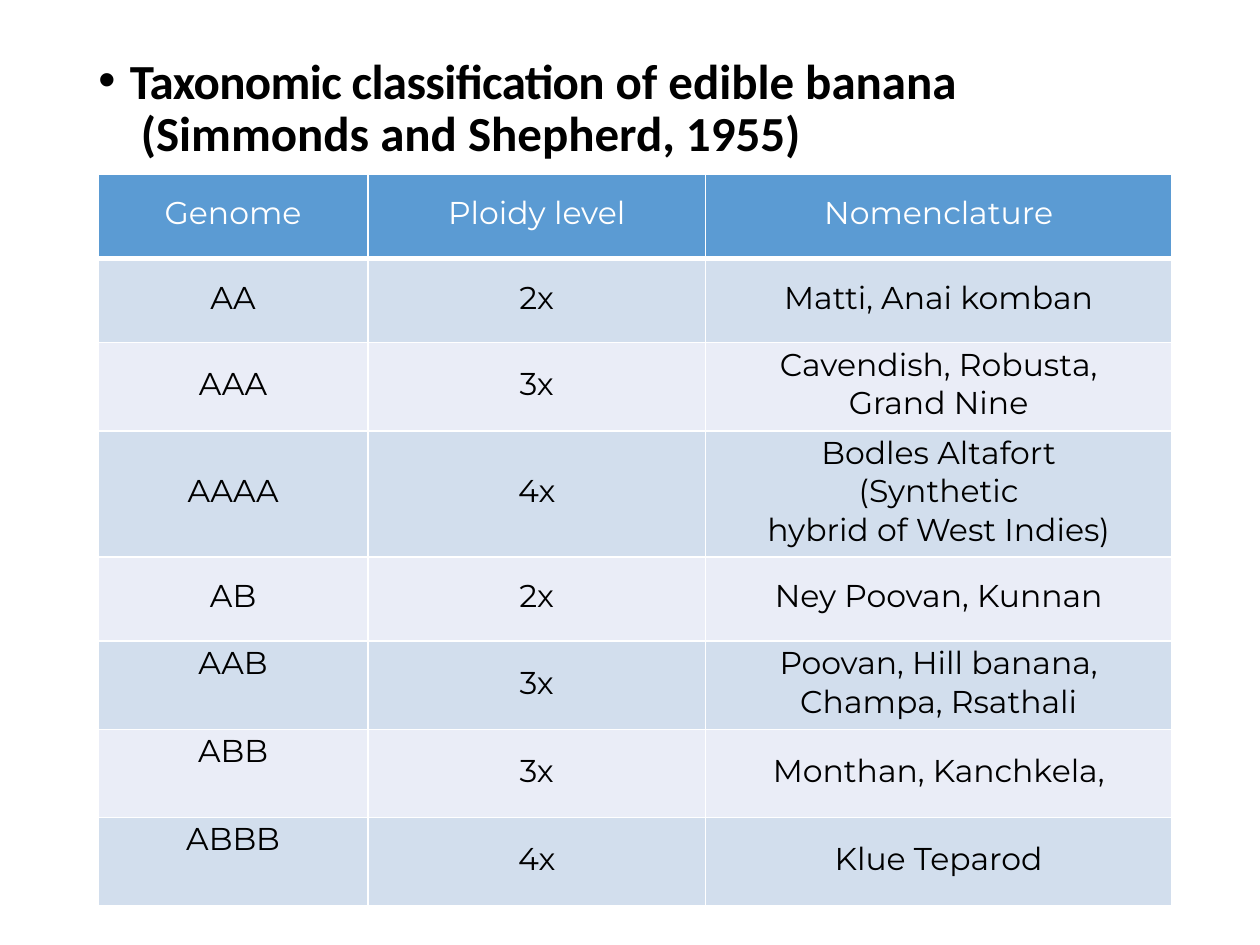
from dataclasses import dataclass

from lxml.etree import SubElement
from pptx import Presentation
from pptx.dml.color import RGBColor
from pptx.enum.text import MSO_ANCHOR, MSO_AUTO_SIZE, PP_ALIGN
from pptx.oxml.ns import qn
from pptx.util import Inches, Pt


@dataclass(frozen=True)
class Theme:
    text: RGBColor = RGBColor(0, 0, 0)
    white: RGBColor = RGBColor(255, 255, 255)
    header: RGBColor = RGBColor.from_string("5B9BD3")
    bands: tuple = (RGBColor.from_string("D2DEED"), RGBColor.from_string("EAEDF7"))
    title_font: str = "Calibri"
    table_font: str = "Montserrat"
    title_size: Pt = Pt(28)
    table_size: Pt = Pt(18)


def set_borders(cell, **widths):
    """Draw white cell borders; widths are points keyed by L, R, T and B."""
    tcPr = cell._tc.get_or_add_tcPr()
    for i, (side, width) in enumerate(widths.items()):
        ln = tcPr.makeelement(qn(f"a:ln{side}"), {"w": str(Pt(width))})
        fill = SubElement(ln, qn("a:solidFill"))
        SubElement(fill, qn("a:srgbClr"), val=str(theme.white))
        tcPr.insert(i, ln)


theme = Theme()
prs = Presentation()
prs.slide_width, prs.slide_height = Inches(10), Inches(7.5)
s = prs.slides.add_slide(prs.slide_layouts.get_by_name("Title Only"))

# Bulleted heading
title = s.shapes.title
title.left, title.top = Inches(0.77), Inches(0.38)
title.width, title.height = Inches(6.89), Inches(0.91)
tf = title.text_frame
tf.word_wrap = True
tf.auto_size = MSO_AUTO_SIZE.NONE
tf.vertical_anchor = MSO_ANCHOR.TOP
tf.margin_left = tf.margin_right = tf.margin_bottom = 0
tf.margin_top = Inches(0.07)
p = tf.paragraphs[0]
p.alignment = PP_ALIGN.LEFT
p.line_spacing, p.space_before = Pt(30), Pt(5.1)
p.font.name, p.font.size, p.font.bold = theme.title_font, theme.title_size, True
p.font.color.rgb = theme.text
tight = p.add_run()
tight.text = "Taxonomic classification"
tight.font._element.set("spc", "-33")
p.add_run().text = " of edible banana  (Simmonds and Shepherd, 1955)"
pPr = p._p.get_or_add_pPr()
pPr.set("marL", str(Inches(0.26)))
pPr.set("indent", str(Inches(-0.25)))
bullet_font = pPr.makeelement(qn("a:buFont"), {"typeface": "Arial"})
bullet = pPr.makeelement(qn("a:buChar"), {"char": "•"})
pPr.find(qn("a:defRPr")).addprevious(bullet_font)
bullet_font.addnext(bullet)

# Genome table
rows = [
    ("Genome", "Ploidy level", "Nomenclature"),
    ("AA", "2x", "Matti, Anai komban"),
    ("AAA", "3x", "Cavendish, Robusta,\nGrand Nine"),
    ("AAAA", "4x", "Bodles Altafort\n(Synthetic\nhybrid of West Indies)"),
    ("AB", "2x", "Ney Poovan, Kunnan"),
    ("AAB", "3x", "Poovan, Hill banana,\nChampa, Rsathali"),
    ("ABB", "3x", "Monthan, Kanchkela,"),
    ("ABBB", "4x", "Klue Teparod"),
]
col_widths = [2.14, 2.68, 3.7]
row_heights = [0.67, 0.67, 0.7, 1, 0.67, 0.7, 0.7, 0.7]
top_aligned = {"AAB", "ABB", "ABBB"}

table = s.shapes.add_table(
    len(rows), len(col_widths), Inches(0.78), Inches(1.38),
    Inches(sum(col_widths)), Inches(sum(row_heights)),
).table
for column, width in zip(table.columns, col_widths):
    column.width = Inches(width)
for row, height in zip(table.rows, row_heights):
    row.height = Inches(height)

for i, texts in enumerate(rows):
    for j, text in enumerate(texts):
        cell = table.cell(i, j)
        cell.text = text
        cell.margin_left = cell.margin_right = 0
        cell.margin_top, cell.margin_bottom = Inches(0.02), Inches(0.06)
        cell.vertical_anchor = MSO_ANCHOR.TOP if text in top_aligned else MSO_ANCHOR.MIDDLE
        cell.fill.solid()
        cell.fill.fore_color.rgb = theme.bands[(i - 1) % 2] if i else theme.header
        set_borders(cell, L=1, R=1, T=3 if i == 1 else 1, B=1 if i else 3)
        for p in cell.text_frame.paragraphs:
            p.alignment = PP_ALIGN.CENTER
            p.font.name, p.font.size, p.font.bold = theme.table_font, theme.table_size, False
            p.font.color.rgb = theme.text if i else theme.white

prs.save("out.pptx")
